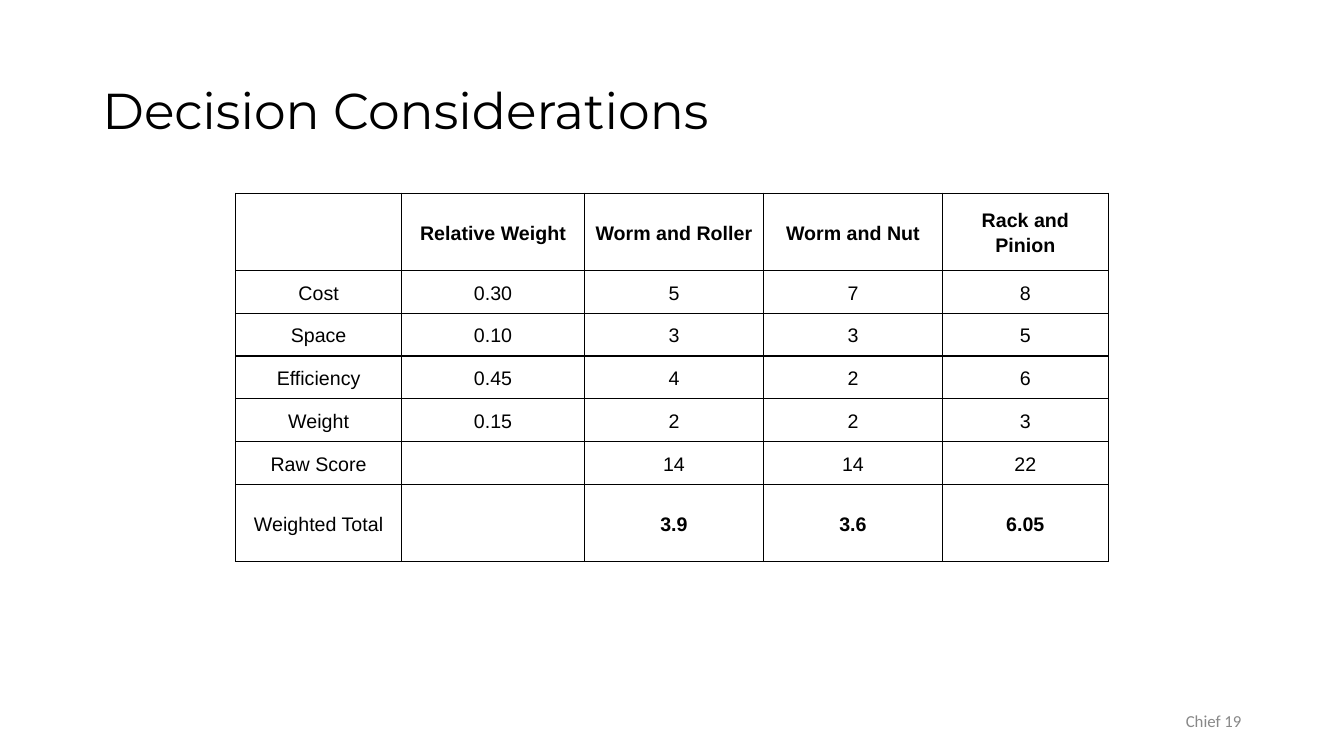
"""Build the Decision Considerations slide with its weighted score table."""
from pptx import Presentation
from pptx import util as u
from pptx.dml.color import RGBColor
from pptx.enum import text
from pptx.oxml import parse_xml
from pptx.oxml.ns import nsdecls


def add_run(p, words, font, size, color, bold=False):
    r = p.add_run()
    r.text = words
    r.font.name = font
    r.font.size = u.Pt(size)
    r.font.bold = bold
    r.font.color.rgb = RGBColor.from_string(color)


def set_frame(tf, margin):
    tf.word_wrap = True
    tf.auto_size = text.MSO_AUTO_SIZE.NONE
    tf.vertical_anchor = text.MSO_ANCHOR.MIDDLE
    tf.margin_left = tf.margin_right = tf.margin_top = tf.margin_bottom = u.Cm(margin)


BLACK, GREY = "000000", "888888"
ROWS = [
    ["", "Relative Weight", "Worm and Roller", "Worm and Nut", "Rack and Pinion"],
    ["Cost", "0.30", "5", "7", "8"],
    ["Space", "0.10", "3", "3", "5"],
    ["Efficiency", "0.45", "4", "2", "6"],
    ["Weight", "0.15", "2", "2", "3"],
    ["Raw Score", "", "14", "14", "22"],
    ["Weighted Total", "", "3.9", "3.6", "6.05"],
]
COL_WIDTHS = [4.18, 4.61, 4.51, 4.51, 4.18]
ROW_HEIGHTS = [1.94] + [1.08] * 5 + [1.94]

prs = Presentation()
prs.slide_width, prs.slide_height = u.Cm(33.87), u.Cm(19.05)
s = prs.slides.add_slide(prs.slide_layouts[5])

title = s.shapes.title
title.left, title.top, title.width, title.height = u.Cm(2.33), u.Cm(1.01), u.Cm(29.21), u.Cm(3.68)
set_frame(title.text_frame, 0.25)
p = title.text_frame.paragraphs[0]
p.alignment = text.PP_ALIGN.LEFT
p.line_spacing = 0.9
add_run(p, "Decision Considerations", "Montserrat", 36, BLACK)

page = s.shapes.add_textbox(u.Cm(23.92), u.Cm(17.66), u.Cm(7.62), u.Cm(1.01))
set_frame(page.text_frame, 0.25)
p = page.text_frame.paragraphs[0]
p.alignment = text.PP_ALIGN.RIGHT
add_run(p, "Chief 19", "Calibri", 12, GREY)

table = s.shapes.add_table(len(ROWS), len(COL_WIDTHS), u.Cm(5.94), u.Cm(4.87),
                           u.Cm(sum(COL_WIDTHS)), u.Cm(sum(ROW_HEIGHTS))).table
table.first_row = table.horz_banding = False
for column, width in zip(table.columns, COL_WIDTHS):
    column.width = u.Cm(width)
for row, height in zip(table.rows, ROW_HEIGHTS):
    row.height = u.Cm(height)

for i, values in enumerate(ROWS):
    for j, value in enumerate(values):
        cell = table.cell(i, j)
        cell.vertical_anchor = text.MSO_ANCHOR.MIDDLE
        cell.margin_left = cell.margin_right = u.Cm(0.18)
        cell.margin_top = cell.margin_bottom = 0
        tc_pr = cell._tc.get_or_add_tcPr()
        for side in "LRTB":
            tc_pr.append(parse_xml(
                f'<a:ln{side} {nsdecls("a")} w="{u.Pt(1)}"><a:solidFill>'
                f'<a:srgbClr val="{BLACK}"/></a:solidFill></a:ln{side}>'))
        cell.fill.background()
        if value:
            p = cell.text_frame.paragraphs[0]
            p.alignment = text.PP_ALIGN.CENTER
            p.line_spacing = 1.15
            bold = i == 0 or (i == len(ROWS) - 1 and j > 0)
            add_run(p, value, "Arial", 14, BLACK, bold)

prs.save("out.pptx")
